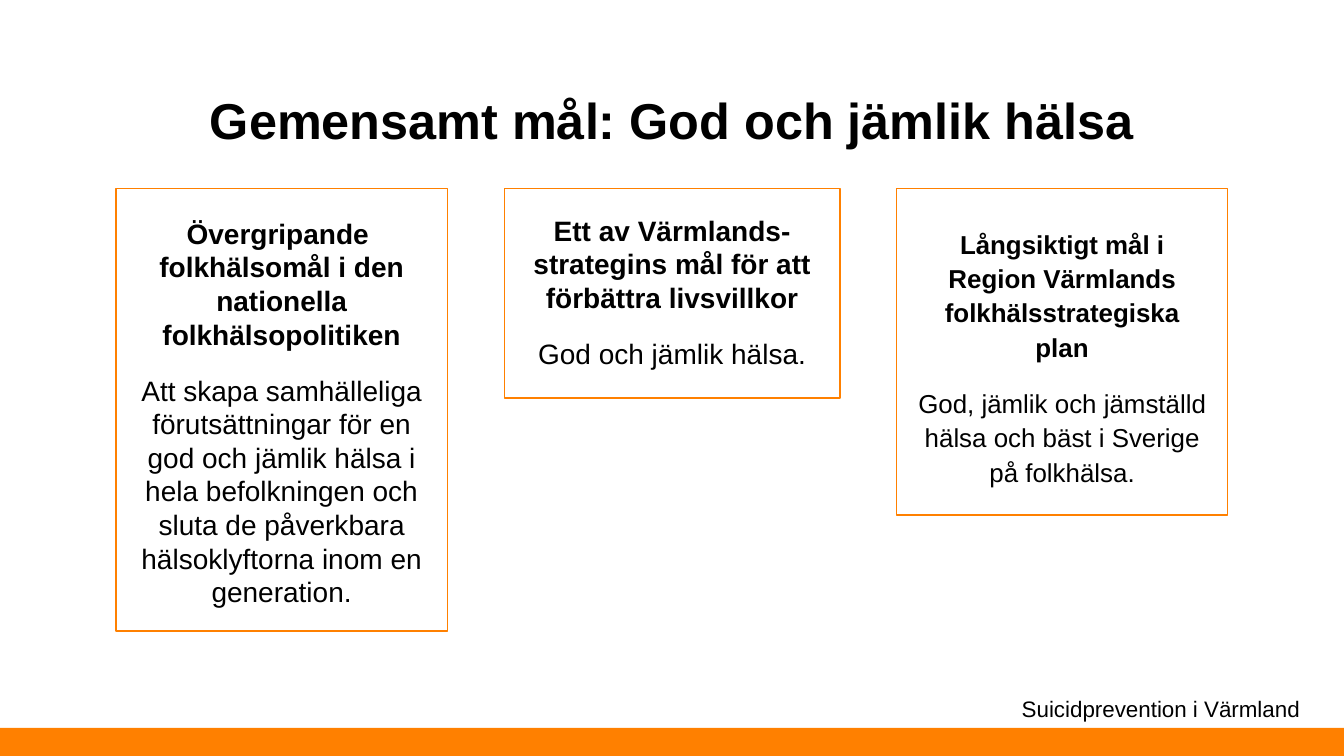
from dataclasses import dataclass

from pptx import Presentation
from pptx.dml.color import RGBColor
from pptx.enum.shapes import MSO_SHAPE
from pptx.enum.text import MSO_ANCHOR, MSO_AUTO_SIZE, PP_ALIGN
from pptx.util import Cm, Pt

RECTANGLE = MSO_SHAPE.RECTANGLE
TOP, MIDDLE, BOTTOM = MSO_ANCHOR.TOP, MSO_ANCHOR.MIDDLE, MSO_ANCHOR.BOTTOM
NO_AUTOFIT = MSO_AUTO_SIZE.NONE
FIT_SHAPE = MSO_AUTO_SIZE.SHAPE_TO_FIT_TEXT
CENTER = PP_ALIGN.CENTER
TITLE_ONLY = 5


@dataclass(frozen=True)
class Theme:
    """Colours, font and type sizes of the slide."""
    font: str = "Arial"
    text: RGBColor = RGBColor(0x00, 0x00, 0x00)
    accent: RGBColor = RGBColor(0xFF, 0x80, 0x00)
    title_size: float = 36
    goal_size: float = 20
    long_term_size: float = 18.5
    footer_size: float = 16


@dataclass(frozen=True)
class Goal:
    """One goal card with its text and measures."""
    heading: str
    body: str
    width: float
    height: float
    size: float
    anchor: MSO_ANCHOR
    line_spacing: float = 1.0
    last_space: float = 6


THEME = Theme()
SLIDE_WIDTH, SLIDE_HEIGHT = 33.87, 19.05
GOALS_LEFT, GOALS_TOP, GOAL_GAP = 2.92, 4.75, 1.43
BAND_HEIGHT = 0.71

GOALS = (
    Goal(
        "Övergripande \vfolkhälsomål i den nationella folkhälsopolitiken",
        "Att skapa samhälleliga förutsättningar för en god och jämlik hälsa i "
        "hela befolkningen och sluta de påverkbara hälsoklyftorna inom en "
        "generation.",
        8.36, 11.15, THEME.goal_size, TOP,
    ),
    Goal(
        "Ett av Värmlands-strategins mål för att förbättra livsvillkor",
        "God och jämlik hälsa.",
        8.46, 5.28, THEME.goal_size, BOTTOM, last_space=18,
    ),
    Goal(
        "Långsiktigt mål i Region Värmlands folkhälsstrategiska plan",
        "God, jämlik och jämställd hälsa och bäst i Sverige på folkhälsa.",
        8.33, 8.23, THEME.long_term_size, BOTTOM, line_spacing=1.1,
    ),
)


def write(paragraph, text, size, bold=False):
    """Fill a paragraph with text in the theme font."""
    paragraph.text = text
    font = paragraph.font
    font.name, font.size, font.bold = THEME.font, Pt(size), bold
    font.color.rgb = THEME.text


def place_title(slide, left, top, width, height):
    """Move and format the title placeholder."""
    title = slide.shapes.title
    title.left, title.top = Cm(left), Cm(top)
    title.width, title.height = Cm(width), Cm(height)
    frame = title.text_frame
    frame.vertical_anchor = MIDDLE
    paragraph = frame.paragraphs[0]
    write(paragraph, "Gemensamt mål: God och jämlik hälsa", THEME.title_size, True)
    paragraph.alignment = CENTER
    paragraph.space_before = Pt(10)


def add_goal(slide, goal, left, top):
    """Add an outlined card with a bold heading and a body text."""
    card = slide.shapes.add_shape(
        RECTANGLE, Cm(left), Cm(top), Cm(goal.width), Cm(goal.height))
    card.shadow.inherit = False
    card.fill.background()
    card.line.color.rgb = THEME.accent
    card.line.width = Pt(1)
    frame = card.text_frame
    frame.word_wrap = True
    frame.auto_size = NO_AUTOFIT
    frame.vertical_anchor = goal.anchor
    frame.margin_left = frame.margin_right = Cm(0.5)
    frame.margin_top = frame.margin_bottom = Cm(0.7)
    heading, body = frame.paragraphs[0], frame.add_paragraph()
    write(heading, goal.heading, goal.size, True)
    write(body, goal.body, goal.size)
    for paragraph, space_after in ((heading, 6), (body, goal.last_space)):
        paragraph.alignment = CENTER
        paragraph.line_spacing = goal.line_spacing
        paragraph.space_before = Pt(10)
        paragraph.space_after = Pt(space_after)


def add_goals(slide, left, top):
    """Set the goal cards side by side with equal gaps."""
    for goal in GOALS:
        add_goal(slide, goal, left, top)
        left += goal.width + GOAL_GAP


def add_footer(slide, left, top, width, height):
    """Add the coloured band and the caption resting on it."""
    caption_width, caption_height = 7.77, 0.94
    caption = slide.shapes.add_textbox(
        Cm(left + width - caption_width - 0.6), Cm(top - caption_height),
        Cm(caption_width), Cm(caption_height))
    frame = caption.text_frame
    frame.word_wrap = True
    frame.auto_size = FIT_SHAPE
    write(frame.paragraphs[0], "Suicidprevention i Värmland", THEME.footer_size)
    band = slide.shapes.add_shape(
        RECTANGLE, Cm(left), Cm(top), Cm(width), Cm(height))
    band.shadow.inherit = False
    band.fill.solid()
    band.fill.fore_color.rgb = THEME.accent
    band.line.fill.background()


def main():
    """Build the slide and save the presentation."""
    presentation = Presentation()
    presentation.slide_width = Cm(SLIDE_WIDTH)
    presentation.slide_height = Cm(SLIDE_HEIGHT)
    slide = presentation.slides.add_slide(presentation.slide_layouts[TITLE_ONLY])
    add_footer(slide, 0, SLIDE_HEIGHT - BAND_HEIGHT, SLIDE_WIDTH, BAND_HEIGHT)
    place_title(slide, 0, 1.52, SLIDE_WIDTH, 2.97)
    add_goals(slide, GOALS_LEFT, GOALS_TOP)
    presentation.save("out.pptx")


if __name__ == "__main__":
    main()
